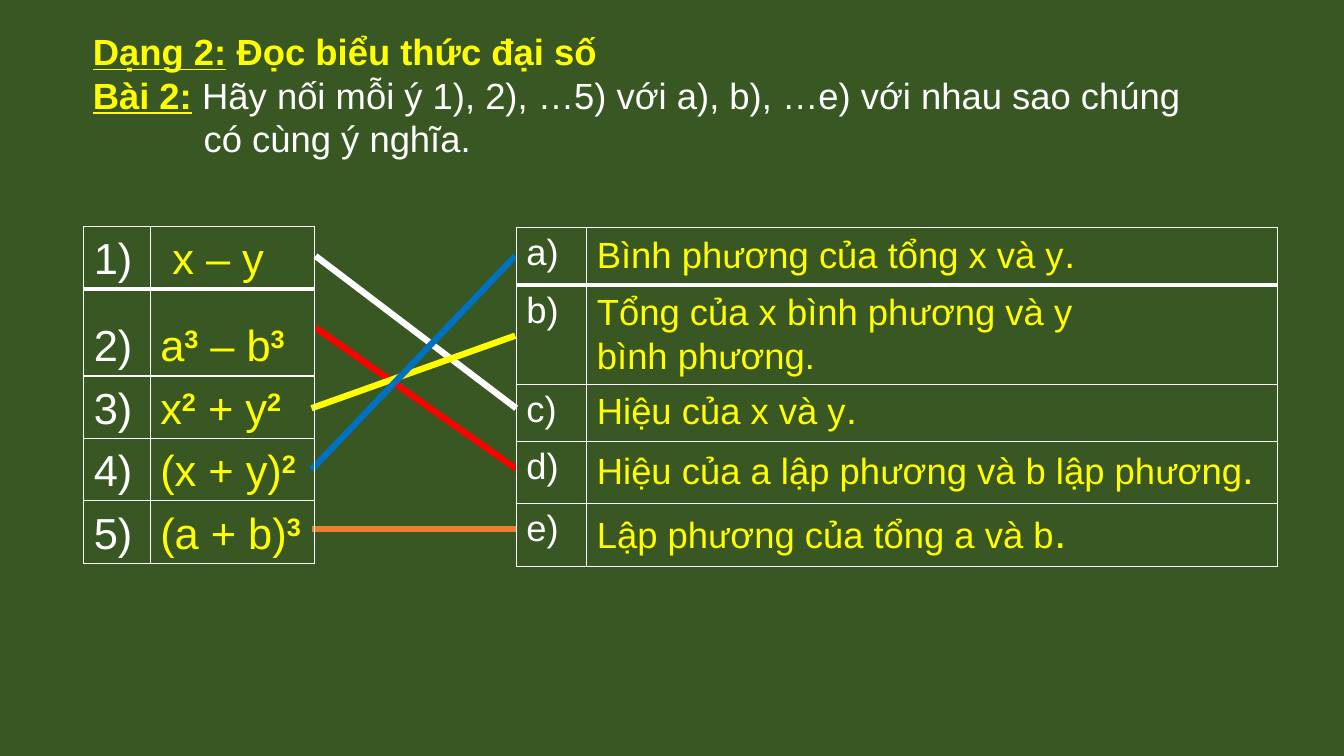
from dataclasses import dataclass
from itertools import groupby

from lxml import etree
from pptx import Presentation
from pptx.dml.color import RGBColor
from pptx.enum import shapes, text
from pptx.oxml import ns
from pptx.util import Inches, Pt

COLORS = {
    "board": "385723",
    "white": "FFFFFF",
    "yellow": "FFFF00",
    "red": "FF0000",
    "blue": "0070C0",
    "orange": "ED7D31",
}


@dataclass(frozen=True)
class Match:
    start: tuple[float, float]
    end: tuple[float, float]
    color: str


@dataclass(frozen=True)
class Formula:
    """Terms alternate between base text and exponent."""
    label: str
    terms: tuple[str, ...]
    height: float


@dataclass(frozen=True)
class Reading:
    label: str
    lines: tuple[str, ...]
    stop_size: int
    height: float


MATCHES = [
    Match((3.13, 2.54), (5.12, 4.05), "white"),
    Match((3.13, 3.25), (5.12, 4.65), "red"),
    Match((3.09, 4.05), (5.11, 3.33), "yellow"),
    Match((3.09, 4.66), (5.11, 2.54), "blue"),
    Match((3.09, 5.25), (5.12, 5.25), "orange"),
]
FORMULAS = [
    Formula("1)", (" x – y",), 0.62),
    Formula("2)", ("a", "3", " – b", "3"), 0.86),
    Formula("3)", ("x", "2", " + y", "2"), 0.62),
    Formula("4)", ("(x + y)", "2"), 0.62),
    Formula("5)", ("(a + b)", "3"), 0.62),
]
READINGS = [
    Reading("a)", ("Bình phương của tổng x và y",), 28, 0.57),
    Reading("b)", ("Tổng của x bình phương và y", "bình phương"), 26, 0.96),
    Reading("c)", ("Hiệu của x và y",), 28, 0.57),
    Reading("d)", ("Hiệu của a lập phương và b lập phương",), 30, 0.61),
    Reading("e)", ("Lập phương của tổng a và b",), 32, 0.63),
]


def rgb(name: str) -> RGBColor:
    return RGBColor.from_string(COLORS[name])


def write(paragraph, content: str, *, size: float = 26, color: str = "white",
          font: str = "Arial", bold: bool = False, underline: bool = False,
          raised: bool = False) -> None:
    run = paragraph.add_run()
    run.text = content
    run.font.size = Pt(size)
    run.font.name = font
    run.font.bold = bold
    run.font.underline = underline
    run.font.color.rgb = rgb(color)
    if raised:
        run.font._element.set("baseline", "30000")


def write_reading(paragraph, content: str) -> None:
    """Write a phrase with each letter ư in Calibri."""
    for is_horned, letters in groupby(content, lambda letter: letter == "ư"):
        write(paragraph, "".join(letters), color="yellow",
              font="Calibri" if is_horned else "Arial")


def add_heading(slide) -> None:
    heading = slide.shapes.add_shape(
        shapes.MSO_SHAPE.RECTANGLE,
        Inches(0.22), Inches(0.24), Inches(11.82), Inches(1.41))
    heading.shadow.inherit = False
    heading.fill.solid()
    heading.fill.fore_color.rgb = rgb("board")
    heading.line.fill.background()
    frame = heading.text_frame
    frame.word_wrap = True
    frame.vertical_anchor = text.MSO_ANCHOR.TOP
    frame.margin_left = Inches(0.7)

    topic = frame.paragraphs[0]
    write(topic, "Dạng 2:", color="yellow", bold=True, underline=True)
    write(topic, " Đọc biểu thức đại số", color="yellow", bold=True)
    task = frame.add_paragraph()
    write(task, "Bài 2:", color="yellow", bold=True, underline=True)
    write(task, " ", bold=True)
    write(task, "Hãy nối mỗi ý 1), 2), …5) với a), b), …e) với nhau sao chúng")
    task_end = frame.add_paragraph()
    task_end._p.get_or_add_pPr().set("marL", str(Inches(1.1)))
    write(task_end, "có cùng ý nghĩa.")
    for paragraph in frame.paragraphs:
        paragraph.alignment = text.PP_ALIGN.LEFT


def add_match(slide, match: Match) -> None:
    line = slide.shapes.add_connector(
        shapes.MSO_CONNECTOR.STRAIGHT,
        *map(Inches, match.start), *map(Inches, match.end))
    line.line.width = Pt(4.5)
    line.line.color.rgb = rgb(match.color)
    etree.SubElement(line._element.spPr, ns.qn("a:effectLst"))


def add_border(cell, side: str, width: float) -> None:
    border = etree.SubElement(cell._tc.get_or_add_tcPr(), ns.qn(f"a:ln{side}"),
                              w=str(Pt(width)))
    fill = etree.SubElement(border, ns.qn("a:solidFill"))
    etree.SubElement(fill, ns.qn("a:srgbClr"), val=COLORS["white"])


def add_grid(slide, left: float, top: float, widths: list[float],
             heights: list[float]):
    """Add an unfilled table with white rules, heavier under its first row."""
    table = slide.shapes.add_table(
        len(heights), len(widths), Inches(left), Inches(top),
        Inches(sum(widths)), Inches(sum(heights))).table
    table.first_row = table.horz_banding = False
    for column, width in zip(table.columns, widths):
        column.width = Inches(width)
    for index, (row, height) in enumerate(zip(table.rows, heights)):
        row.height = Inches(height)
        for cell in row.cells:
            add_border(cell, "L", 1)
            add_border(cell, "R", 1)
            add_border(cell, "T", 3 if index == 1 else 1)
            add_border(cell, "B", 3 if index == 0 else 1)
            cell.fill.background()
    return table


def add_formulas(slide) -> None:
    table = add_grid(slide, 0.83, 2.25, [0.66, 1.63],
                     [formula.height for formula in FORMULAS])
    for row, formula in zip(table.rows, FORMULAS):
        label, expression = row.cells
        for cell in row.cells:
            cell.vertical_anchor = text.MSO_ANCHOR.BOTTOM
        write(label.text_frame.paragraphs[0], formula.label, size=31)
        for index, term in enumerate(formula.terms):
            is_exponent = index % 2 == 1
            write(expression.text_frame.paragraphs[0], term, size=31,
                  color="yellow", bold=is_exponent, raised=is_exponent)


def add_readings(slide) -> None:
    table = add_grid(slide, 5.12, 2.26, [0.7, 6.85],
                     [reading.height for reading in READINGS])
    for row, reading in zip(table.rows, READINGS):
        label, meaning = row.cells
        write(label.text_frame.paragraphs[0], reading.label)
        frame = meaning.text_frame
        for index, line in enumerate(reading.lines):
            paragraph = frame.add_paragraph() if index else frame.paragraphs[0]
            write_reading(paragraph, line)
        write(paragraph, ".", size=reading.stop_size, color="yellow")


def main() -> None:
    deck = Presentation()
    deck.slide_width, deck.slide_height = Inches(13.33), Inches(7.5)
    slide = deck.slides.add_slide(deck.slide_layouts[6])
    slide.background.fill.solid()
    slide.background.fill.fore_color.rgb = rgb("board")
    for match in MATCHES:
        add_match(slide, match)
    add_heading(slide)
    add_formulas(slide)
    add_readings(slide)
    deck.save("out.pptx")


if __name__ == "__main__":
    main()
